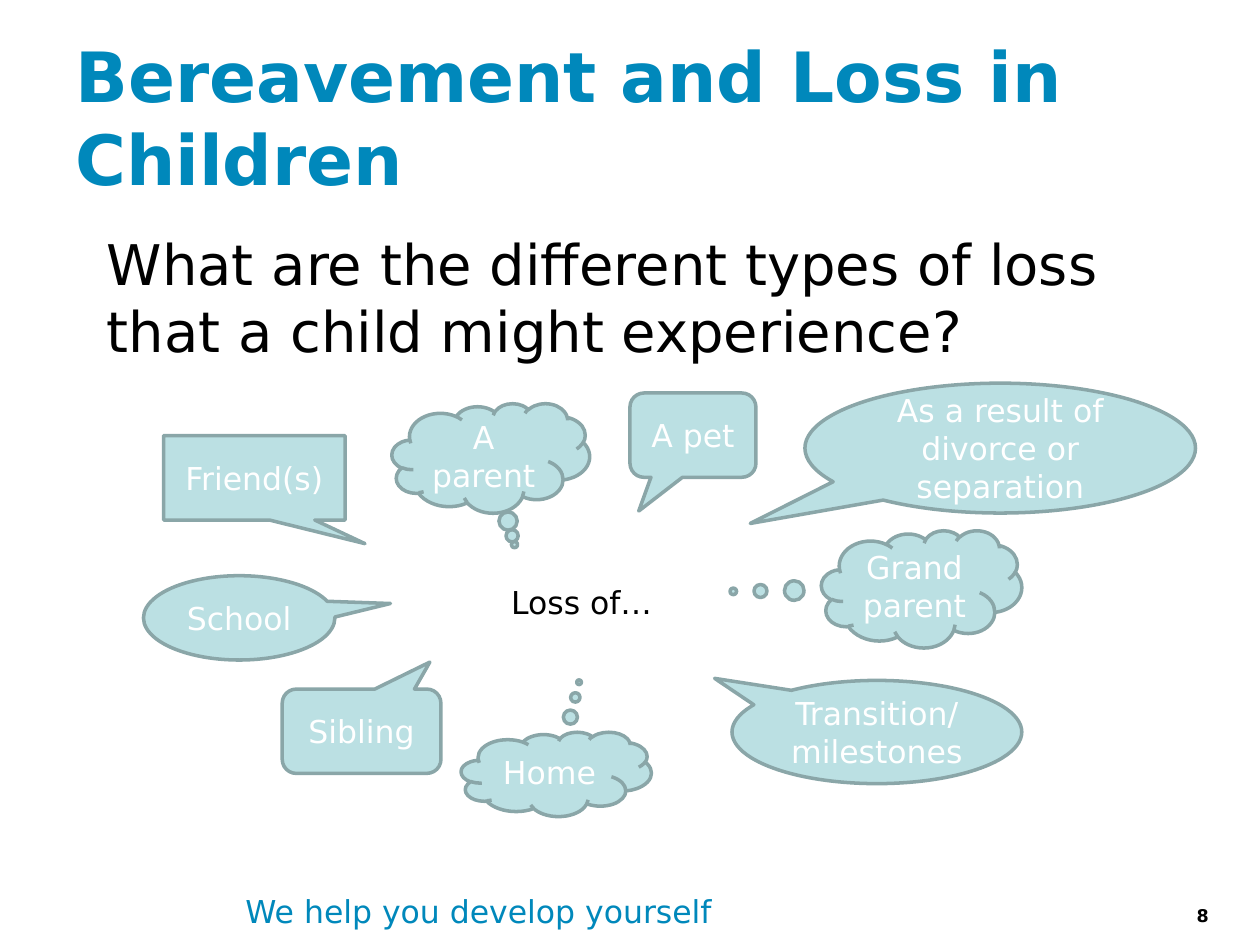
from pptx import Presentation
from pptx.dml.color import RGBColor
from pptx.enum.shapes import MSO_SHAPE as Shape
from pptx.enum.text import MSO_ANCHOR as Anchor, PP_ALIGN as Align
from pptx.util import Pt

BLUE = RGBColor(0x00, 0x88, 0xBB)
BLACK = RGBColor(0x00, 0x00, 0x00)
WHITE = RGBColor(0xFF, 0xFF, 0xFF)
AQUA = RGBColor(0xBB, 0xE0, 0xE3)
SLATE = RGBColor(0x8A, 0xA6, 0xA8)
FONT = "DejaVu Sans"

RECT = Shape.RECTANGULAR_CALLOUT
ROUND = Shape.ROUNDED_RECTANGULAR_CALLOUT
OVAL = Shape.OVAL_CALLOUT
CLOUD = Shape.CLOUD_CALLOUT

# Kind, text, box within the ring, tip of the tail from the centre
LOSSES = [
    (RECT, "Friend(s)", (11.5, 30, 103.7, 48.2), (0.61, 0.78)),
    (CLOUD, "A parent", (142, 11.5, 113, 62.6), (0.12, 0.79)),
    (OVAL, "As a result of divorce or separation",
     (378, 0, 223.2, 74.2), (-0.64, 0.58)),
    (ROUND, "A pet", (278, 5.6, 72, 48.2), (-0.43, 0.9)),
    (OVAL, "School", (0, 110, 109.4, 48.2), (0.79, -0.17)),
    (OVAL, "Transition/\nmilestones",
     (336.3, 169.8, 165.6, 59), (-0.56, -0.52)),
    (CLOUD, "Home", (181.5, 199.3, 108.7, 48.2), (0.12, -1.09)),
    (ROUND, "Sibling", (79.3, 174.8, 90.7, 48.2), (0.43, -0.82)),
    (CLOUD, "Grand\nparent", (387.4, 84.1, 114.5, 67), (-0.94, 0.02)),
]


def write(shape, text, size, color, bold=False, align=Align.LEFT,
          anchor=Anchor.TOP):
    frame = shape.text_frame
    frame.word_wrap = True
    frame.vertical_anchor = anchor
    frame.text = text
    for para in frame.paragraphs:
        para.alignment = align
        font = para.font
        font.name, font.size, font.bold = FONT, Pt(size), bold
        font.color.rgb = color


def add_text(slide, box, text, size, color, **style):
    label = slide.shapes.add_textbox(*map(Pt, box))
    write(label, text, size, color, **style)


def add_bubble(slide, box, kind, text, tip):
    bubble = slide.shapes.add_shape(kind, *map(Pt, box))
    bubble.shadow.inherit = False
    bubble.fill.solid()
    bubble.fill.fore_color.rgb = AQUA
    bubble.line.color.rgb = SLATE
    bubble.line.width = Pt(2)
    for i, value in enumerate(tip):
        bubble.adjustments[i] = value
    write(bubble, text, 18, WHITE, align=Align.CENTER, anchor=Anchor.MIDDLE)


def add_ring(slide, left, top):
    """Place the callouts around the central label."""
    for kind, text, (x, y, width, height), tip in LOSSES:
        add_bubble(slide, (left + x, top + y, width, height), kind, text, tip)
    add_text(slide, (left + 203, top + 110.8, 98, 28.8), "Loss of…", 18, BLACK)


def add_head(slide, left, top, width):
    add_text(slide, (left, top, width, 90), "Bereavement and Loss in Children",
             39.6, BLUE, bold=True, anchor=Anchor.MIDDLE)
    add_text(slide, (left + 18, top + 105.8, width, 356.4),
             "What are the different types of loss that a child might "
             "experience?", 32, BLACK)


def add_foot(slide, left, top, width):
    add_text(slide, (left, top, 292.3, 28.8), "We help you develop yourself",
             18, BLUE)
    add_text(slide, (left + width - 65.5, top + 7.2, 65.5, 26.6), "8",
             10, BLACK, bold=True, align=Align.CENTER)


def main():
    deck = Presentation()
    deck.slide_width, deck.slide_height = Pt(720), Pt(540)
    slide = deck.slides.add_slide(deck.slide_layouts[6])
    add_head(slide, 36, 21.6, 648)
    add_ring(slide, 82, 219)
    add_foot(slide, 133.2, 506.2, 586.8)
    deck.save("out.pptx")


if __name__ == "__main__":
    main()
